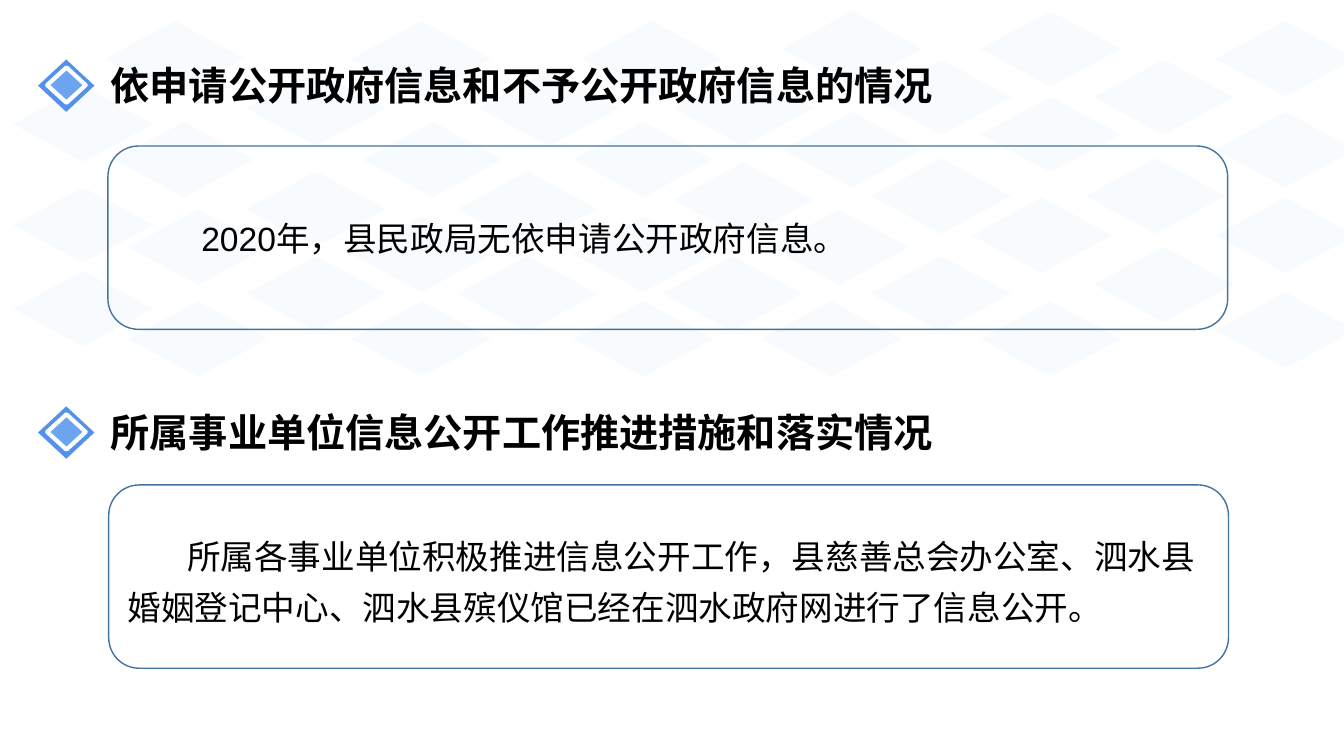
from dataclasses import dataclass

from lxml import etree
from pptx import Presentation
from pptx.dml.color import RGBColor
from pptx.enum.shapes import MSO_SHAPE
from pptx.enum.text import MSO_ANCHOR, MSO_AUTO_SIZE, PP_ALIGN
from pptx.oxml.ns import qn
from pptx.util import Cm, Pt

DIAMOND = MSO_SHAPE.DIAMOND
ROUNDED = MSO_SHAPE.ROUNDED_RECTANGLE
MIDDLE = MSO_ANCHOR.MIDDLE
LEFT = PP_ALIGN.LEFT
GROW = MSO_AUTO_SIZE.SHAPE_TO_FIT_TEXT


@dataclass(frozen=True)
class Theme:
    font: str = "Arial"
    text: RGBColor = RGBColor(0x00, 0x00, 0x00)
    pattern: RGBColor = RGBColor(0xDE, 0xEB, 0xF7)
    marker_outer: RGBColor = RGBColor(0x53, 0x91, 0xED)
    marker_inner: RGBColor = RGBColor(0x6C, 0xA4, 0xF0)
    marker_line: RGBColor = RGBColor(0xFF, 0xFF, 0xFF)
    box_line: RGBColor = RGBColor(0x43, 0x73, 0x9E)
    heading_size: Pt = Pt(28)
    body_size: Pt = Pt(24)


theme = Theme()


def add_diamond(shapes, left, top, width, height, color):
    shape = shapes.add_shape(DIAMOND, Cm(left), Cm(top), Cm(width), Cm(height))
    shape.shadow.inherit = False
    shape.fill.solid()
    shape.fill.fore_color.rgb = color
    shape.line.fill.background()
    return shape


def write_text(text_frame, text, size, bold=False):
    text_frame.word_wrap = True
    paragraph = text_frame.paragraphs[0]
    paragraph.text = text
    paragraph.alignment = LEFT
    font = paragraph.runs[0].font
    font.name = theme.font
    font.size = size
    font.bold = bold
    font.color.rgb = theme.text
    return paragraph


presentation = Presentation()
presentation.slide_width = Cm(33.87)
presentation.slide_height = Cm(19.05)
slide = presentation.slides.add_slide(presentation.slide_layouts[6])

# Pale diamond pattern: left edge of each column, then the tops in it
pattern_columns = {
    30.63: (0.53, 2.82, 4.98, 7.37),
    27.56: (1.5, 6.22),
    27.36: (3.99,),
    24.71: (0.28, 2.44, 7.59),
    24.49: (4.98,),
    21.95: (1.5, 3.99, 6.45),
    19.71: (0.28, 2.82),
    19.38: (5.28,),
    19.18: (7.59,),
    16.97: (1.78, 4.09),
    16.69: (6.45,),
    14.66: (0.53,),
    14.45: (3.07, 5.46, 7.59),
    12.07: (1.78,),
    11.53: (4.32, 6.45),
    9.14: (3.07,),
    8.86: (0.53, 5.46, 7.59),
    6.2: (1.78, 4.32, 6.45),
    3.23: (5.28, 7.59),
    2.87: (3.07,),
    2.64: (0.53,),
    0.33: (2.18, 4.72, 6.83),
}
pattern = slide.shapes.add_group_shape()
for left, tops in pattern_columns.items():
    for top in tops:
        tile = add_diamond(pattern.shapes, left, top, 3.53, 1.9, theme.pattern)
        color = tile.fill._xPr.find(".//" + qn("a:srgbClr"))
        etree.SubElement(color, qn("a:alpha"), val="20000")

# Headings, each with its diamond marker: text, top, height
headings = (
    ("依申请公开政府信息和不予公开政府信息的情况", 1.42, 2.64),
    ("所属事业单位信息公开工作推进措施和落实情况", 10.16, 1.45),
)
for text, top, height in headings:
    heading = slide.shapes.add_group_shape()
    title = heading.shapes.add_textbox(Cm(2.54), Cm(top), Cm(24.46), Cm(height))
    write_text(title.text_frame, text, theme.heading_size, bold=True)
    title.text_frame.auto_size = GROW
    add_diamond(heading.shapes, 0.96, top + 0.08, 1.42, 1.32, theme.marker_outer)
    inner = add_diamond(heading.shapes, 1.19, top + 0.28, 0.97, 0.89, theme.marker_inner)
    inner.line.color.rgb = theme.marker_line
    inner.line.width = Pt(3)

# Rounded boxes: text, left, top, first-line indent, line spacing
boxes = (
    ("2020年，县民政局无依申请公开政府信息。", 2.72, 3.68, 1.88, None),
    ("所属各事业单位积极推进信息公开工作，县慈善总会办公室、泗水县婚姻登记中心、"
     "泗水县殡仪馆已经在泗水政府网进行了信息公开。", 2.74, 12.22, 1.5, Pt(36)),
)
for text, left, top, indent, spacing in boxes:
    box = slide.shapes.add_shape(ROUNDED, Cm(left), Cm(top), Cm(28.22), Cm(4.62))
    box.shadow.inherit = False
    box.fill.background()
    box.line.color.rgb = theme.box_line
    box.line.width = Pt(1)
    box.text_frame.vertical_anchor = MIDDLE
    paragraph = write_text(box.text_frame, text, theme.body_size)
    paragraph.line_spacing = spacing
    paragraph._p.get_or_add_pPr().set("indent", str(Cm(indent)))

presentation.save("out.pptx")
